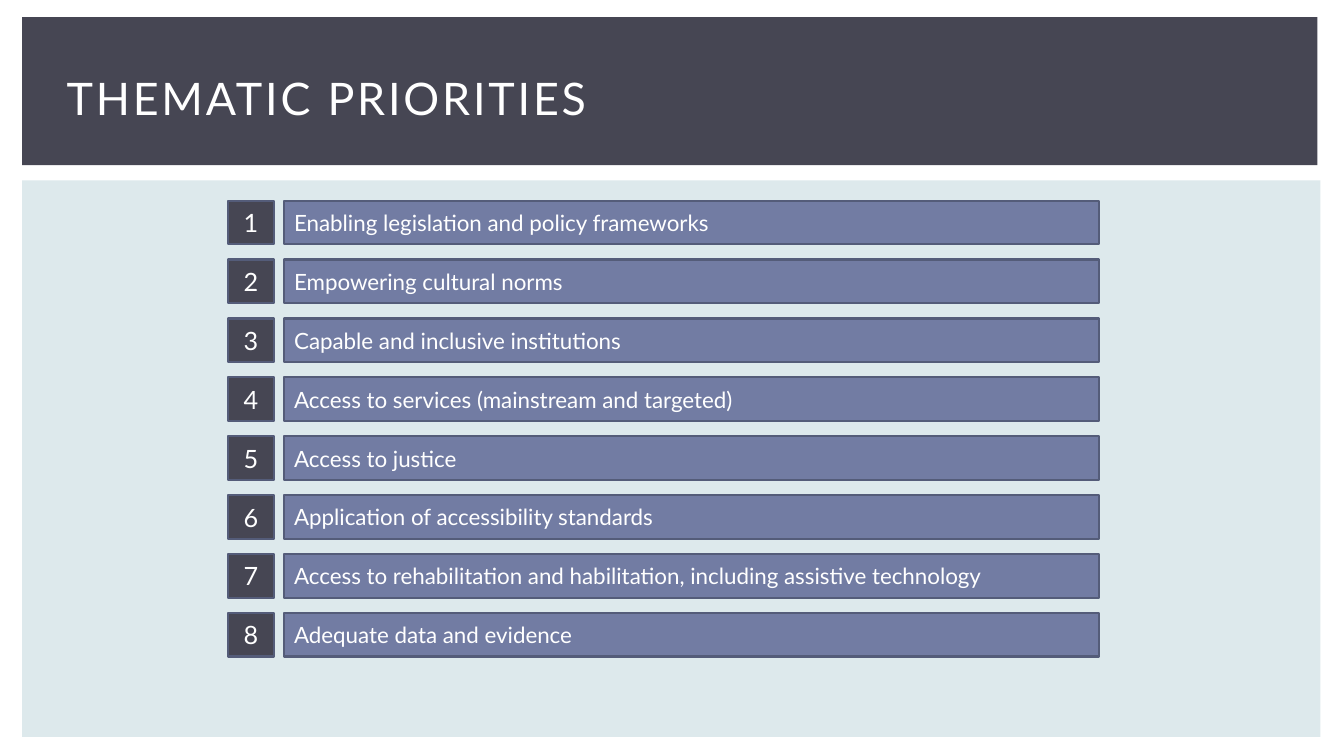
from pptx import Presentation
from pptx.dml.color import RGBColor
from pptx.enum.shapes import MSO_SHAPE
from pptx.enum.text import MSO_ANCHOR, MSO_AUTO_SIZE, PP_ALIGN
from pptx.util import Pt

COLORS = {
    "panel": "DDE9EC",
    "dark": "464653",
    "bar": "727CA3",
    "outline": "545C79",
    "text": "FFFFFF",
}
PRIORITIES = [
    "Enabling legislation and policy frameworks",
    "Empowering cultural norms",
    "Capable and inclusive institutions",
    "Access to services (mainstream and targeted)",
    "Access to justice",
    "Application of accessibility standards",
    "Access to rehabilitation and habilitation, including assistive technology",
    "Adequate data and evidence",
]
FIRST_ROW_TOP = 143.3
ROW_PITCH = 42.1
ROW_HEIGHT = 31


def add_box(left, top, width, height, fill):
    shape = slide.shapes.add_shape(
        MSO_SHAPE.RECTANGLE, Pt(left), Pt(top), Pt(width), Pt(height)
    )
    shape.shadow.inherit = False
    shape.fill.solid()
    shape.fill.fore_color.rgb = RGBColor.from_string(COLORS[fill])
    shape.line.fill.background()
    return shape


def write_text(shape, text, size, alignment):
    frame = shape.text_frame
    frame_format = {
        "text": text,
        "word_wrap": True,
        "auto_size": MSO_AUTO_SIZE.NONE,
        "vertical_anchor": MSO_ANCHOR.MIDDLE,
    }
    for name, value in frame_format.items():
        setattr(frame, name, value)
    paragraph = frame.paragraphs[0]
    paragraph.alignment = alignment
    font = paragraph.runs[0].font
    for name, value in {"name": "Lato", "size": Pt(size), "bold": False}.items():
        setattr(font, name, value)
    font.color.rgb = RGBColor.from_string(COLORS["text"])


presentation = Presentation()
presentation.slide_width = Pt(960)
presentation.slide_height = Pt(540)
slide = presentation.slides.add_slide(presentation.slide_layouts[5])

# Background panel and title band
add_box(15.84, 128.88, 927.36, 397.44, "panel")
add_box(15.84, 12.24, 925.2, 105.84, "dark")

# Title, brought in front of the band
title = slide.shapes.title
title_place = {"left": 40.32, "top": 28.08, "width": 879.84, "height": 82.8}
for name, value in title_place.items():
    setattr(title, name, Pt(value))
write_text(title, "THEMATIC PRIORITIES", 32, PP_ALIGN.LEFT)
title.text_frame.paragraphs[0].runs[0].font._element.set("spc", "200")
slide.shapes._spTree.append(title._element)

# Numbered priorities
for index, priority in enumerate(PRIORITIES):
    top = FIRST_ROW_TOP + index * ROW_PITCH
    number_box = add_box(162.7, top, 33.1, ROW_HEIGHT, "dark")
    priority_bar = add_box(203, top, 581.8, ROW_HEIGHT, "bar")
    write_text(number_box, str(index + 1), 18, PP_ALIGN.CENTER)
    write_text(priority_bar, priority, 16, PP_ALIGN.LEFT)
    for shape in (number_box, priority_bar):
        shape.line.color.rgb = RGBColor.from_string(COLORS["outline"])
        shape.line.width = Pt(1.5)

presentation.save("out.pptx")
